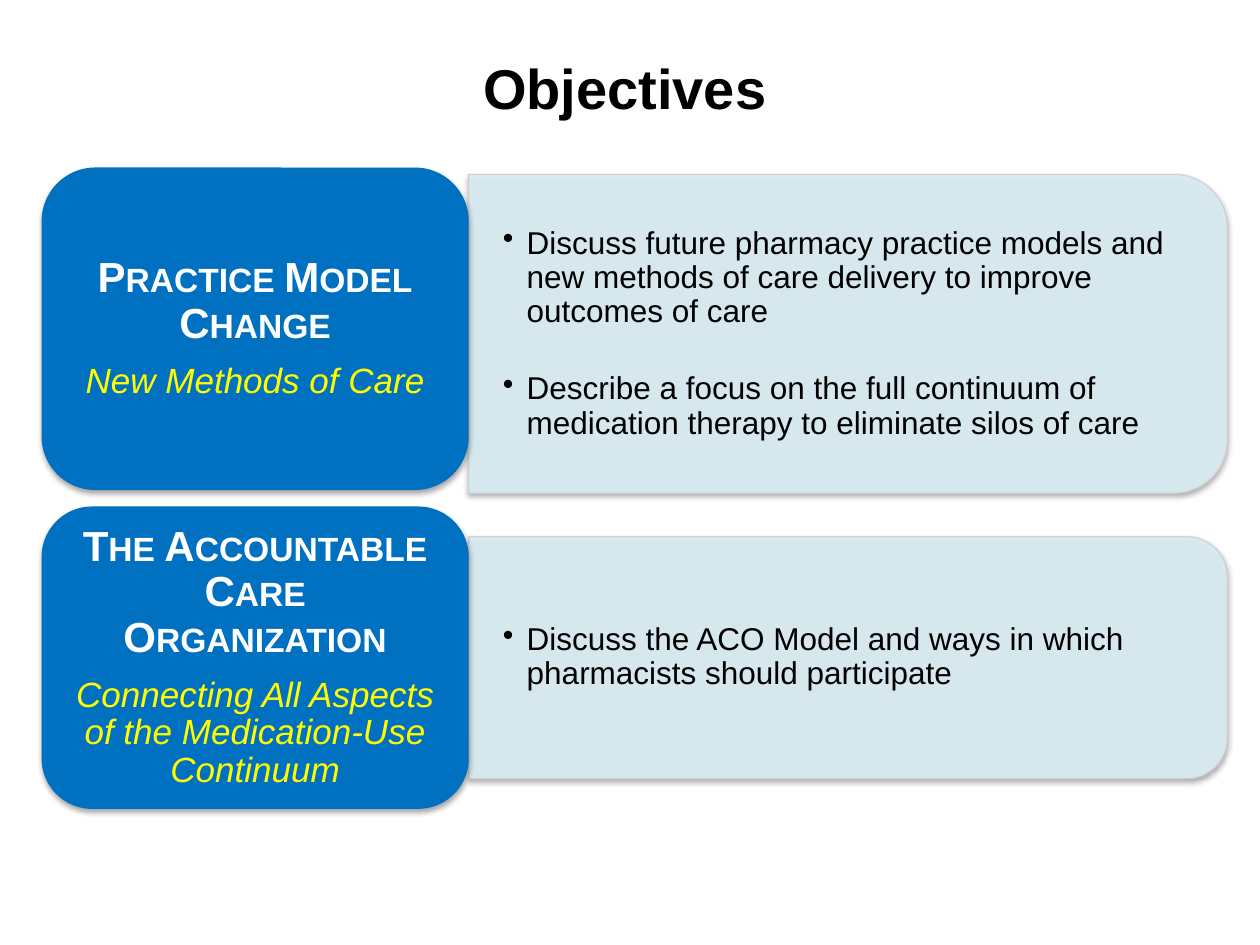
import pptx
import pptx.util
import pptx.dml.color
import pptx.enum.shapes
import pptx.enum.text
import pptx.oxml
import pptx.oxml.ns

Inches = pptx.util.Inches
Pt = pptx.util.Pt
RGBColor = pptx.dml.color.RGBColor
SHAPE = pptx.enum.shapes.MSO_SHAPE
ALIGN = pptx.enum.text.PP_ALIGN
MIDDLE = pptx.enum.text.MSO_ANCHOR.MIDDLE
qn = pptx.oxml.ns.qn

BLACK = RGBColor(0x00, 0x00, 0x00)
WHITE = RGBColor(0xFF, 0xFF, 0xFF)
YELLOW = RGBColor(0xFF, 0xFF, 0x00)
BLUE = RGBColor(0x00, 0x70, 0xC0)
PALE = RGBColor(0xDB, 0xEE, 0xF4)
GREY = RGBColor(0xCD, 0xD0, 0xD7)

TITLE = {"size": Pt(32), "bold": True, "color": BLACK}
HEAD = {"size": Pt(24), "bold": True, "color": WHITE}
SUB = {"size": Pt(20), "italic": True, "color": YELLOW}
ITEM = {"size": Pt(18), "color": BLACK}

LEFT, LABEL_W, PANEL_W, TEXT_W = 0.33, 3.39, 6.02, 5.92
SHADOW = (
    f'<a:outerShdw {pptx.oxml.ns.nsdecls("a")} blurRad="{Pt(3.1)}" '
    f'dist="{Pt(1.8)}" dir="5400000" rotWithShape="0">'
    '<a:srgbClr val="000000"><a:alpha val="35000"/></a:srgbClr></a:outerShdw>'
)

# label top, label height, panel centre, panel height, heading, subheading, items
ROWS = [
    (1.33, 2.56, 2.65, 2.53, "Practice Model Change", "New Methods of Care", [
        "Discuss future pharmacy practice models and new methods of care "
        "delivery to improve outcomes of care",
        "Describe a focus on the full continuum of medication therapy to "
        "eliminate silos of care"]),
    (4.02, 2.4, 5.22, 1.92, "The Accountable Care Organization",
     "Connecting All Aspects of the Medication-Use Continuum", [
         "Discuss the ACO Model and ways in which pharmacists should "
         "participate"]),
]


def write(para, text, style):
    run = para.add_run()
    run.text = text
    run.font.name = "Arial"
    for key, value in style.items():
        if key == "color":
            run.font.color.rgb = value
        else:
            setattr(run.font, key, value)
    return run


def add_para(frame, index, gap, align):
    """Return the next paragraph, with a gap above all but the first."""
    para = frame.add_paragraph() if index else frame.paragraphs[0]
    para.alignment = align
    para.line_spacing = 0.9
    para.space_before = Pt(gap if index else 0)
    return para


def add_block(slide, kind, box, fill):
    shape = slide.shapes.add_shape(kind, *map(Inches, box))
    shape.fill.solid()
    shape.fill.fore_color.rgb = fill
    shape.line.fill.background()
    shape.shadow.inherit = False
    effects = shape._element.spPr.find(qn("a:effectLst"))
    effects.append(pptx.oxml.parse_xml(SHADOW))
    return shape


def add_panel(slide, mid, height):
    """Draw a panel rounded on its right by turning one rounded on top."""
    left = LEFT + LABEL_W + (PANEL_W - height) / 2
    box = (left, mid - PANEL_W / 2, height, PANEL_W)
    panel = add_block(slide, SHAPE.ROUND_2_SAME_RECTANGLE, box, PALE)
    panel.rotation = 90
    panel.line.color.rgb = GREY
    panel.line.width = Pt(0.75)
    for color in panel._element.spPr.iter(qn("a:srgbClr")):
        if color.get("val") != "000000":
            alpha = color.makeelement(qn("a:alpha"), {"val": "90000"})
            color.append(alpha)


def add_items(slide, mid, height, items):
    high = height * 0.9
    box = (LEFT + LABEL_W, mid - high / 2, TEXT_W, high)
    frame = slide.shapes.add_textbox(*map(Inches, box)).text_frame
    frame.word_wrap = True
    frame.vertical_anchor = MIDDLE
    frame.margin_left = frame.margin_right = Inches(0.27)
    frame.margin_top = frame.margin_bottom = Inches(0.14)
    for index, item in enumerate(items):
        para = add_para(frame, index, 25, ALIGN.LEFT)
        props = para._p.get_or_add_pPr()
        props.set("marL", str(Inches(0.19)))
        props.set("indent", str(-Inches(0.19)))
        props.append(props.makeelement(qn("a:buChar"), {"char": "•"}))
        write(para, item, ITEM)


def add_label(slide, top, height, head, sub):
    box = (LEFT, top, LABEL_W, height)
    label = add_block(slide, SHAPE.ROUNDED_RECTANGLE, box, BLUE)
    frame = label.text_frame
    frame.word_wrap = True
    frame.vertical_anchor = MIDDLE
    run = write(add_para(frame, 0, 0, ALIGN.CENTER), head, HEAD)
    run._r.get_or_add_rPr().set("cap", "small")
    write(add_para(frame, 1, 9, ALIGN.CENTER), sub, SUB)


def add_title(slide, text):
    title = slide.shapes.title
    title.left, title.top = Inches(0.42), Inches(0.3)
    title.width, title.height = Inches(9.08), Inches(0.78)
    title.text_frame.vertical_anchor = MIDDLE
    para = title.text_frame.paragraphs[0]
    para.alignment = ALIGN.CENTER
    write(para, text, TITLE)


def main():
    deck = pptx.Presentation()
    deck.slide_width, deck.slide_height = Inches(10), Inches(7.5)
    slide = deck.slides.add_slide(deck.slide_layouts[5])
    add_title(slide, "Objectives")
    for top, high, mid, depth, head, sub, items in ROWS:
        add_panel(slide, mid, depth)
        add_items(slide, mid, depth, items)
        add_label(slide, top, high, head, sub)
    deck.save("out.pptx")


if __name__ == "__main__":
    main()
